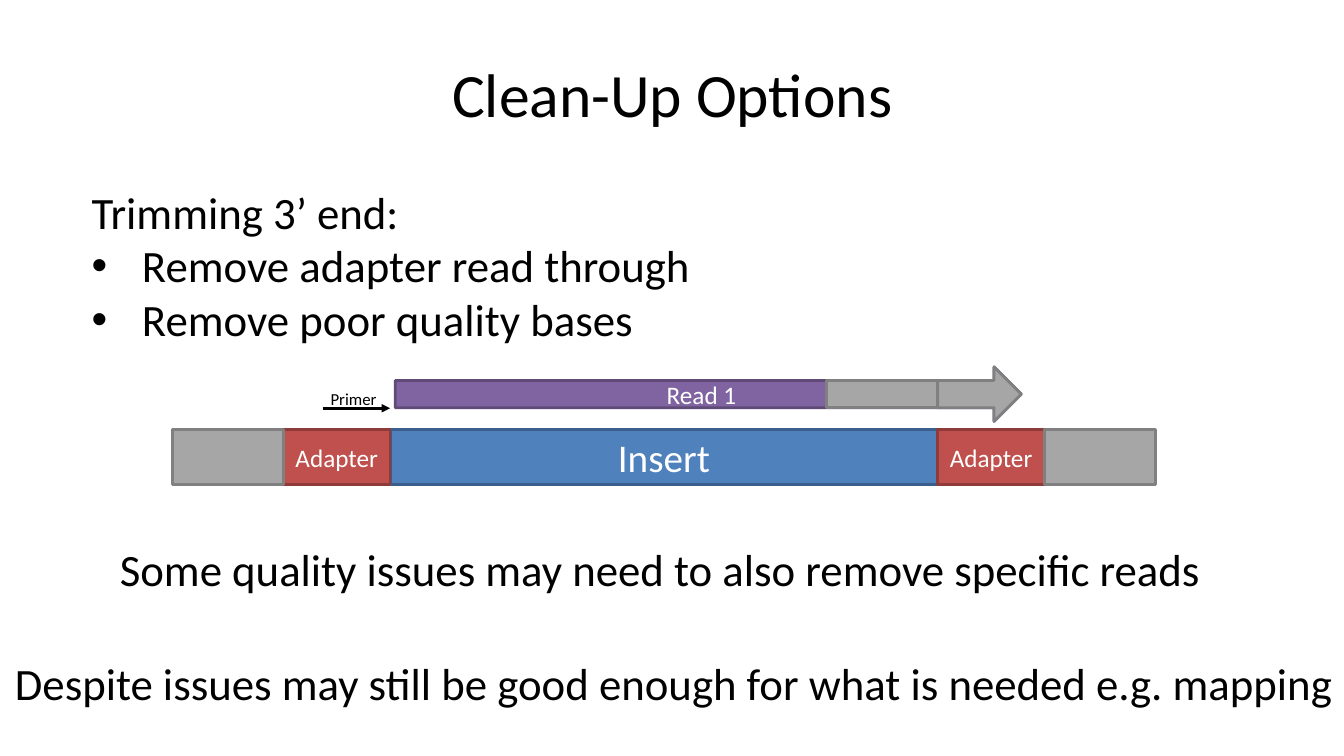
"""Build the slide on clean-up options for sequencing reads."""
from lxml import etree
from pptx import Presentation, util as u
from pptx.dml.color import RGBColor
from pptx.enum import shapes, text
from pptx.oxml.ns import qn

COLOURS = {
    "black": "000000", "white": "FFFFFF",
    "blue": "4F81BD", "blue edge": "3A5F8C",
    "red": "C0504D", "red edge": "8E3B39",
    "grey": "A6A6A6", "grey edge": "808080",
    "purple": "8064A2", "purple edge": "5F4A78",
}
SHAPE = shapes.MSO_SHAPE


def colour(name):
    return RGBColor.from_string(COLOURS[name])


def inches(values):
    return [u.Inches(value) for value in values]


def write(frame, content, size, ink="black", align=text.PP_ALIGN.LEFT,
          anchor=text.MSO_ANCHOR.TOP, wrap=True, font="Calibri", bullets_from=None):
    frame.word_wrap = wrap
    frame.auto_size = text.MSO_AUTO_SIZE.NONE
    frame.vertical_anchor = anchor
    for index, line in enumerate(content.split("\n")):
        paragraph = frame.add_paragraph() if index else frame.paragraphs[0]
        paragraph.alignment = align
        if bullets_from is not None and index >= bullets_from:
            properties = paragraph._p.get_or_add_pPr()
            properties.set("marL", str(u.Inches(0.5)))
            properties.set("indent", str(-u.Inches(0.5)))
            etree.SubElement(properties, qn("a:buFont")).set("typeface", "Arial")
            etree.SubElement(properties, qn("a:buChar")).set("char", "•")
        run = paragraph.add_run()
        run.text = line
        run.font.name = font
        run.font.size = u.Pt(size)
        run.font.color.rgb = colour(ink)


class SlideBuilder:
    """Hold the slide and its shared line style."""

    line_width = u.Pt(2)

    def __init__(self, slide):
        self.slide = slide

    def title(self, content, box):
        shape = self.slide.shapes.title
        shape.left, shape.top, shape.width, shape.height = inches(box)
        write(shape.text_frame, content, 44, align=text.PP_ALIGN.CENTER,
              anchor=text.MSO_ANCHOR.MIDDLE)

    def textbox(self, content, box, size=32, **style):
        shape = self.slide.shapes.add_textbox(*inches(box))
        write(shape.text_frame, content, size, **style)

    def block(self, kind, box, fill, label="", size=18):
        shape = self.slide.shapes.add_shape(kind, *inches(box))
        shape.shadow.inherit = False
        shape.fill.solid()
        shape.fill.fore_color.rgb = colour(fill)
        shape.line.color.rgb = colour(fill + " edge")
        shape.line.width = self.line_width
        if label:
            write(shape.text_frame, label, size, ink="white",
                  align=text.PP_ALIGN.CENTER, anchor=text.MSO_ANCHOR.MIDDLE)

    def arrow(self, start, end):
        connector = self.slide.shapes.add_connector(
            shapes.MSO_CONNECTOR.STRAIGHT, *inches(start + end))
        connector.line.color.rgb = colour("black")
        connector.line.width = self.line_width
        etree.SubElement(connector.line._get_or_add_ln(), qn("a:tailEnd")).set("type", "triangle")
        etree.SubElement(connector._element.spPr, qn("a:effectLst"))


def main():
    presentation = Presentation()
    presentation.slide_width, presentation.slide_height = inches((13.33, 7.5))
    builder = SlideBuilder(presentation.slides.add_slide(presentation.slide_layouts[5]))

    builder.title("Clean-Up Options", (0.67, 0.3, 12, 1.25))
    builder.textbox("Some quality issues may need to also remove specific reads",
                    (1.09, 5.33, 11.14, 0.64))
    builder.textbox("Trimming 3’ end:\nRemove adapter read through\nRemove poor quality bases",
                    (0.81, 1.78, 11.11, 1.72), bullets_from=1)
    builder.textbox("Despite issues may still be good enough for what is needed e.g. mapping",
                    (0.05, 6.46, 13.47, 0.64))

    insert_left, insert_right = 3.87, 9.3
    top, height = 4.26, 0.55
    builder.block(SHAPE.RECTANGLE, (insert_left, top, insert_right - insert_left, height),
                  "blue", "Insert", 28)
    left, right = insert_left, insert_right
    for width, fill, label in ((1.06, "red", "Adapter"), (1.1, "grey", "")):
        left -= width
        for x in (left, right):
            builder.block(SHAPE.RECTANGLE, (x, top, width, height), fill, label)
        right += width

    builder.arrow((3.2, 4.05), (insert_left, 4.05))
    builder.textbox("Primer", (3.18, 3.81, 0.66, 0.3), size=12, wrap=False)

    read_left, read_right, read_top, read_height = 3.92, 10.13, 3.64, 0.54
    for x, fill, label in ((read_left, "purple", "Read 1"), (insert_right, "grey", "")):
        builder.block(SHAPE.RIGHT_ARROW, (x, read_top, read_right - x, read_height), fill, label)
    builder.block(SHAPE.RECTANGLE,
                  (insert_right - 1.1, read_top + read_height / 4, 1.1, read_height / 2), "grey")

    presentation.save("out.pptx")


if __name__ == "__main__":
    main()
